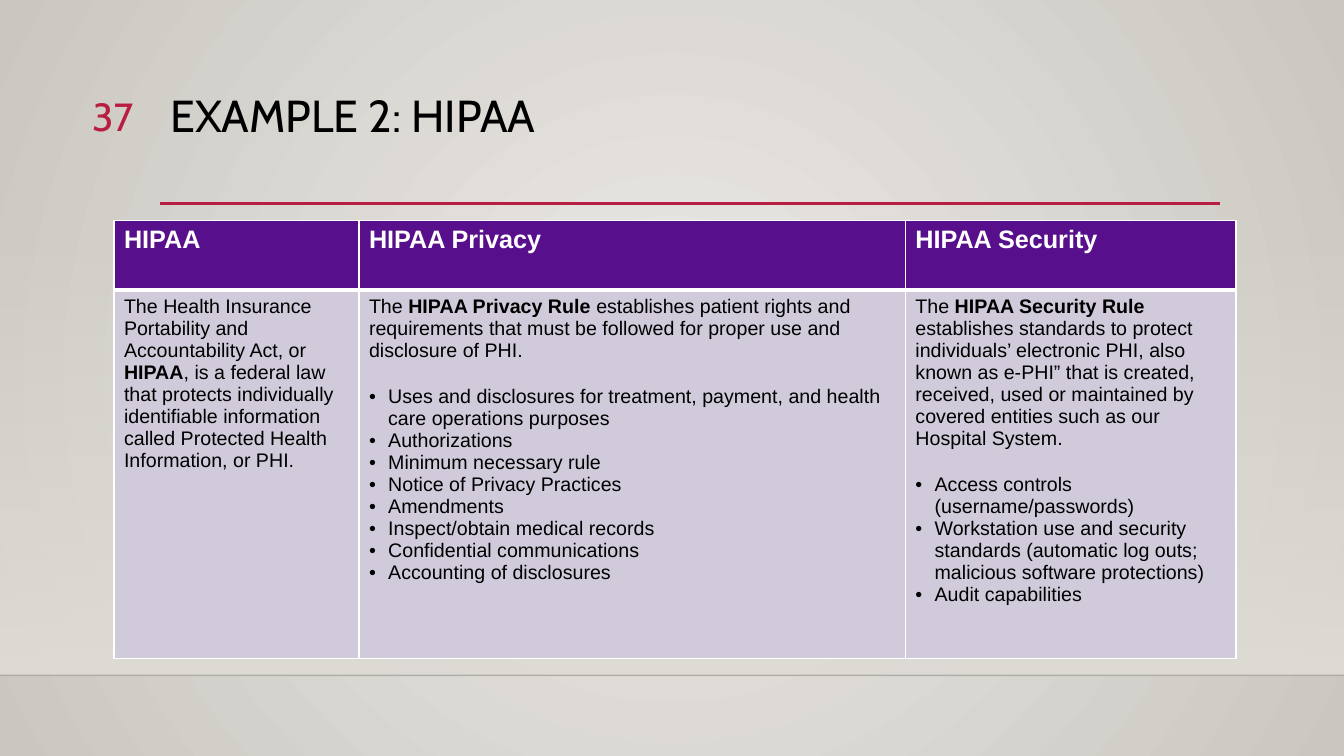
from pptx import Presentation
from pptx.dml.color import RGBColor
from pptx.enum.shapes import MSO_CONNECTOR, MSO_SHAPE
from pptx.enum.text import PP_ALIGN
from pptx.oxml import parse_xml
from pptx.oxml.ns import nsdecls
from pptx.oxml.xmlchemy import OxmlElement
from pptx.util import Inches, Pt

LEFT, RIGHT = PP_ALIGN.LEFT, PP_ALIGN.RIGHT
STRAIGHT, RECTANGLE = MSO_CONNECTOR.STRAIGHT, MSO_SHAPE.RECTANGLE

THEME = {
    "accent": "B71E42", "ink": "000000", "white": "FFFFFF", "floor": "000001",
    "header": "580F8B", "body": "D0CADA",
    "glow": "ECEAE7", "edge": "CAC7C1", "wall": "DFDBD5",
    "title font": "Cabin", "table font": "Arial",
    "title size": 32, "number size": 28, "header size": 18, "body size": 14,
}


def write(frame, text, size="body size", color="ink", font="table font", bold=False,
          align=LEFT, spacing=1.0, gap=0, bullet=False):
    """Add one paragraph; words between asterisks are bold."""
    para = frame.paragraphs[0] if not frame.text else frame.add_paragraph()
    para.alignment, para.line_spacing, para.space_after = align, spacing, Pt(gap)
    if bullet:
        properties = para._p.get_or_add_pPr()
        properties.set("marL", str(Inches(0.19)))
        properties.set("indent", str(-Inches(0.19)))
        for tag, name, value in (("a:buFont", "typeface", THEME[font]),
                                 ("a:buChar", "char", "•")):
            mark = OxmlElement(tag)
            mark.set(name, value)
            properties.append(mark)
    for index, words in enumerate(text.split("*")):
        if words:
            span = para.add_run()
            span.text = words
            span.font.size, span.font.name = Pt(THEME[size]), THEME[font]
            span.font.bold = bold or index % 2 == 1
            span.font.color.rgb = RGBColor.from_string(THEME[color])


def set_gradient(fill, element, colors, direction):
    """Give a fill two colour stops and a direction; return its XML."""
    fill.gradient()
    for stop, color in zip(fill.gradient_stops, colors):
        stop.color.rgb = RGBColor.from_string(THEME[color])
    gradient = element.xpath(".//a:gradFill")[0]
    gradient.replace(gradient.xpath("a:lin")[0], parse_xml(direction))
    return gradient


# Deck and page
deck = Presentation()
deck.slide_width, deck.slide_height = Inches(13.33), Inches(7.5)
width, height = deck.slide_width, deck.slide_height
page = deck.slides.add_slide(deck.slide_layouts[6])

# Background: a round glow, with a wall that fades in above the floor
set_gradient(page.background.fill, page.element, ("glow", "edge"),
             f'<a:path {nsdecls("a")} path="circle">'
             '<a:fillToRect l="50000" t="50000" r="50000" b="50000"/></a:path>')
floor = Inches(6.7)
wall_top = Inches(2.21)
wall = page.shapes.add_shape(RECTANGLE, 0, wall_top, width, floor - wall_top)
wall.shadow.inherit = False
wall.line.fill.background()
fade = set_gradient(wall.fill, wall._element, ("wall", "wall"),
                    f'<a:lin {nsdecls("a")} ang="5400000" scaled="0"/>')
fade.xpath(".//a:srgbClr")[0].append(parse_xml(f'<a:alpha {nsdecls("a")} val="0"/>'))

# Floor line and title rule
margin = Inches(1.59)
rule_y = Inches(2.02)
for start, end, y, color, weight, opacity in (
        (0, width, floor, "floor", 1, 20),
        (margin, Inches(12.1), rule_y, "accent", 2.5, 100)):
    rule = page.shapes.add_connector(STRAIGHT, start, y, end, y)
    rule.line.width = Pt(weight)
    rule.line.color.rgb = RGBColor.from_string(THEME[color])
    rule._element.spPr.append(OxmlElement("a:effectLst"))
    alpha = parse_xml(f'<a:alpha {nsdecls("a")} val="{opacity * 1000}"/>')
    rule._element.xpath(".//a:ln//a:srgbClr")[0].append(alpha)

# Title and page number
for text, left, top, box_width, box_height, look in (
        ("EXAMPLE 2: HIPAA", 1.59, 0.88, 10.5, 1.15,
         {"size": "title size", "spacing": 0.9}),
        ("37", 0.53, 0.87, 0.89, 0.55,
         {"size": "number size", "color": "accent", "align": RIGHT})):
    box = page.shapes.add_textbox(*map(Inches, (left, top, box_width, box_height)))
    box.text_frame.word_wrap = True
    write(box.text_frame, text, font="title font", **look)

# Table content: heading, width, introduction, bullets
columns = (
    ("HIPAA", 2.43,
     "The Health Insurance Portability and Accountability Act, or *HIPAA*, is a federal law "
     "that protects individually identifiable information called Protected Health "
     "Information, or PHI.", ()),
    ("HIPAA Privacy", 5.42,
     "The* HIPAA Privacy Rule *establishes patient rights and requirements that must be "
     "followed for proper use and disclosure of PHI.",
     ("Uses and disclosures for treatment, payment, and health care operations purposes",
      "Authorizations", "Minimum necessary rule", "Notice of Privacy Practices",
      "Amendments", "Inspect/obtain medical records", "Confidential communications",
      "Accounting of disclosures")),
    ("HIPAA Security", 3.28,
     "The* HIPAA Security Rule *establishes standards to protect individuals’ electronic "
     "PHI, also known as e-PHI” that is created, received, used or maintained by covered "
     "entities such as our Hospital System.",
     ("Access controls (username/passwords)",
      "Workstation use and security standards (automatic log outs; malicious software "
      "protections)", "Audit capabilities")),
)
row_heights = (0.69, 3.65)

# Table
table = page.shapes.add_table(
    len(row_heights), len(columns), Inches(1.13), Inches(2.19),
    Inches(sum(column[1] for column in columns)), Inches(sum(row_heights))).table
for row, row_height in zip(table.rows, row_heights):
    row.height = Inches(row_height)
for index, (heading, column_width, introduction, bullets) in enumerate(columns):
    table.columns[index].width = Inches(column_width)
    head, body = table.cell(0, index), table.cell(1, index)
    write(head.text_frame, heading, size="header size", color="white", bold=True)
    write(body.text_frame, introduction, gap=17 if bullets else 0)
    for item in bullets:
        write(body.text_frame, item, bullet=True)

    # White borders, thick between the header and the body
    for cell, fill, thick in ((head, "header", "B"), (body, "body", "T")):
        for side in "LRTB":
            weight = Pt(3 if side == thick else 1)
            cell._tc.get_or_add_tcPr().append(parse_xml(
                f'<a:ln{side} {nsdecls("a")} w="{weight}"><a:solidFill>'
                f'<a:srgbClr val="{THEME["white"]}"/></a:solidFill></a:ln{side}>'))
        cell.fill.solid()
        cell.fill.fore_color.rgb = RGBColor.from_string(THEME[fill])

deck.save("out.pptx")
